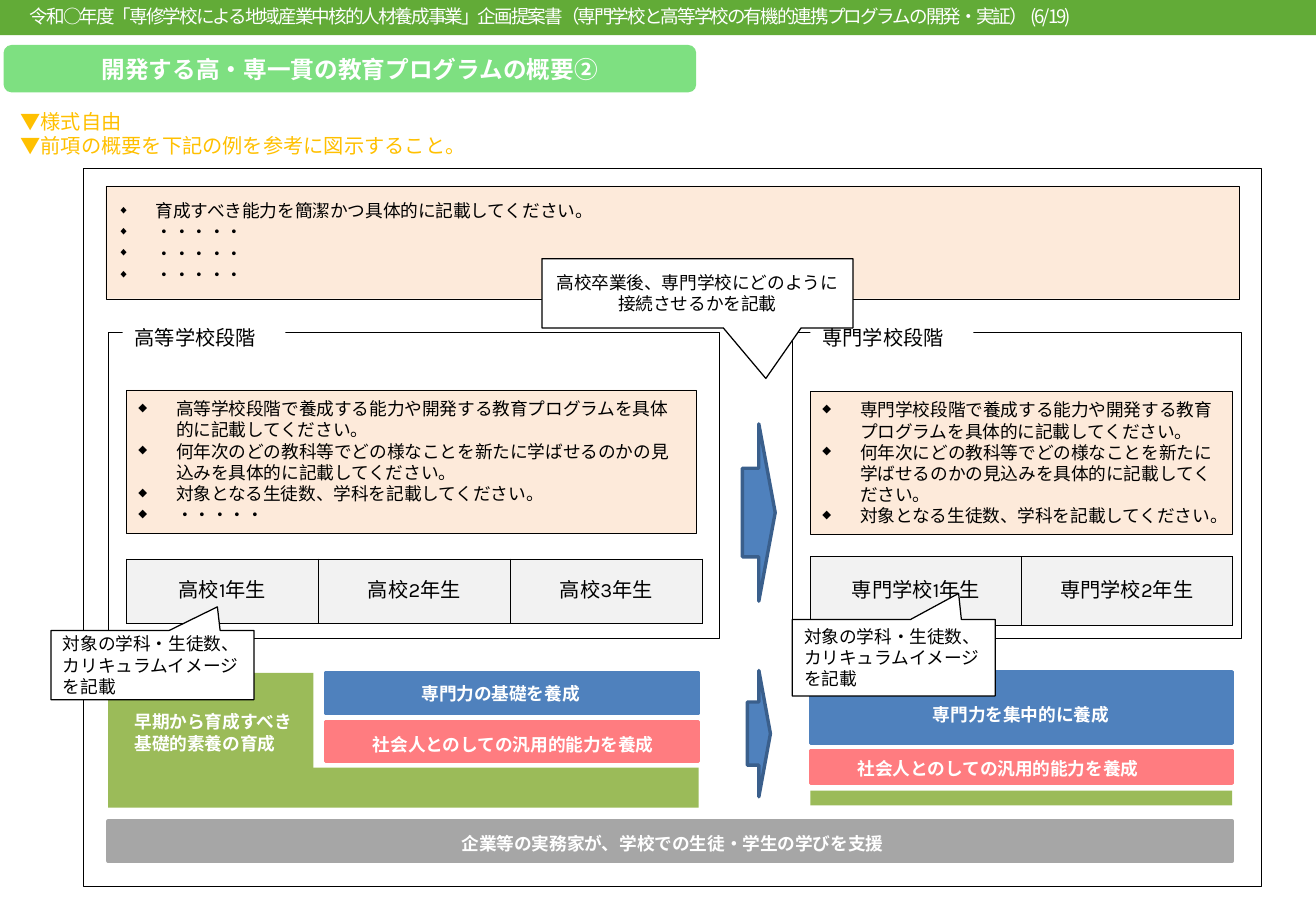
from lxml import etree
from pptx import Presentation
from pptx.dml.color import RGBColor
from pptx.enum.shapes import MSO_SHAPE
from pptx.enum.text import MSO_ANCHOR, MSO_AUTO_SIZE, PP_ALIGN
from pptx.oxml.ns import qn
from pptx.util import Inches, Pt

RECTANGLE, ROUNDED = MSO_SHAPE.RECTANGLE, MSO_SHAPE.ROUNDED_RECTANGLE
ARROW, CALLOUT = MSO_SHAPE.RIGHT_ARROW, MSO_SHAPE.RECTANGULAR_CALLOUT
TOP, MIDDLE = MSO_ANCHOR.TOP, MSO_ANCHOR.MIDDLE
LEFT, CENTER = PP_ALIGN.LEFT, PP_ALIGN.CENTER


class Theme:
    text_font, note_font = "Karla", "Noto Sans CJK JP"
    title, heading, header, body = 14, 12, 11, 10.5
    black, white, note = "000000", "FFFFFF", "FFC000"
    header_green, title_green, green = "62AB37", "7EE081", "9BBB59"
    blue, blue_edge, pink, gray = "4F81BD", "3A5F8C", "FF7C80", "A6A6A6"
    peach, cell = "FDEADA", "F2F2F2"


def add_box(kind, place, fill=None, line=None, width=0.25):
    """Add a preset shape; place is left, top, width, height in inches."""
    shape = slide.shapes.add_shape(kind, *map(Inches, place))
    shape.shadow.inherit = False
    for part, colour in ((shape.fill, fill), (shape.line.fill, line)):
        if colour:
            part.solid()
            part.fore_color.rgb = RGBColor.from_string(colour)
        else:
            part.background()
    if line:
        shape.line.width = Pt(width)
    return shape


def write(frame, lines, size=Theme.body, colour=Theme.black, bold=False, align=LEFT,
          anchor=MIDDLE, font=Theme.text_font, bullets=False):
    """Fill a text frame with one paragraph for each line."""
    settings = {"word_wrap": True, "auto_size": MSO_AUTO_SIZE.NONE, "vertical_anchor": anchor}
    for name, value in settings.items():
        setattr(frame, name, value)
    frame.text = "\n".join(lines)
    for paragraph in frame.paragraphs:
        paragraph.alignment = align
        paragraph.space_before = Pt(0)
        run = paragraph.runs[0]
        for name, value in {"name": font, "size": Pt(size), "bold": bold}.items():
            setattr(run.font, name, value)
        run.font.color.rgb = RGBColor.from_string(colour)
        etree.SubElement(run.font._element, qn("a:ea"), typeface=font)
        if bullets:
            properties = paragraph._p.get_or_add_pPr()
            properties.set("marL", str(Inches(0.31)))
            properties.set("indent", str(Inches(-0.31)))
            etree.SubElement(properties, qn("a:buSzPct"), val="65000")
            etree.SubElement(properties, qn("a:buChar"), char="◆")


presentation = Presentation()
presentation.slide_width, presentation.slide_height = Inches(10.83), Inches(7.5)
slide = presentation.slides.add_slide(presentation.slide_layouts[1])
title, abilities = slide.placeholders

# Columns shared by the two school stages
HIGH, COLLEGE = 0.89, 6.67
COLLEGE_WIDTH = 3.47
FULL_WIDTH = COLLEGE + COLLEGE_WIDTH - HIGH
SKILL, SKILL_WIDTH = 2.68, 3.07

# Title on its green bar
title_place = (0.03, 0.37, 5.7, 0.39)
add_box(ROUNDED, title_place, Theme.title_green)
slide.shapes._spTree.append(title._element)

# Title and ability list use the placeholders
for placeholder, place in ((title, title_place), (abilities, (0.87, 1.53, 9.33, 0.93))):
    for name, value in zip(("left", "top", "width", "height"), place):
        setattr(placeholder, name, Inches(value))
write(title.text_frame, ["開発する高・専一貫の教育プログラムの概要②"], Theme.title, Theme.white, True, CENTER)
write(abilities.text_frame, ["育成すべき能力を簡潔かつ具体的に記載してください。"] + ["・・・・・"] * 3, bullets=True)
abilities.fill.solid()
abilities.fill.fore_color.rgb = RGBColor.from_string(Theme.peach)
abilities.line.color.rgb = RGBColor.from_string(Theme.black)
abilities.line.width = Pt(0.25)

# Instructions
note = slide.shapes.add_textbox(*map(Inches, (0.07, 0.65, 10.32, 0.91))).text_frame
write(note, ["▼様式自由", "▼前項の概要を下記の例を参考に図示すること。"],
      Theme.heading, Theme.note, anchor=TOP, font=Theme.note_font)
note.margin_top = Inches(0.25)
for paragraph in note.paragraphs:
    paragraph.line_spacing = Pt(14.2)

# Outer frame
add_box(RECTANGLE, (0.69, 1.39, 9.69, 5.91), line=Theme.black, width=0.5)

# Stage panels: frame, heading, list
stages = [
    ((HIGH, 5.03), 1.01, "高等学校段階", (1.04, 3.21, 4.69, 1.18), [
        "高等学校段階で養成する能力や開発する教育プログラムを具体的に記載してください。",
        "何年次のどの教科等でどの様なことを新たに学ばせるのかの見込みを具体的に記載してください。",
        "対象となる生徒数、学科を記載してください。",
        "・・・・・"]),
    ((6.52, 3.7), COLLEGE, "専門学校段階", (COLLEGE, 3.22, COLLEGE_WIDTH, 1.18), [
        "専門学校段階で養成する能力や開発する教育プログラムを具体的に記載してください。",
        "何年次にどの教科等でどの様なことを新たに学ばせるのかの見込みを具体的に記載してください。",
        "対象となる生徒数、学科を記載してください。"]),
]
for (left, width), heading_left, heading, list_place, items in stages:
    add_box(RECTANGLE, (left, 2.74, width, 2.52), line=Theme.black, width=0.5)
    label = add_box(RECTANGLE, (heading_left, 2.63, 1.34, 0.3), Theme.white)
    write(label.text_frame, [heading], Theme.heading, anchor=TOP)
    panel = add_box(RECTANGLE, list_place, Theme.peach, Theme.black)
    write(panel.text_frame, items, bullets=True)

# School year tables
for place, school, years in (((1.04, 4.6, 4.74, 0.53), "高校", 3),
                             ((COLLEGE, 4.58, COLLEGE_WIDTH, 0.57), "専門学校", 2)):
    table = slide.shapes.add_table(1, years, *map(Inches, place)).table
    table.first_row = table.horz_banding = False
    for year, cell in enumerate(table.iter_cells(), 1):
        write(cell.text_frame, [f"{school}{year}年生"], Theme.heading, align=CENTER)
        cell.vertical_anchor = MIDDLE
        properties = cell._tc.get_or_add_tcPr()
        for side in ("lnL", "lnR", "lnT", "lnB"):
            border = etree.SubElement(properties, qn(f"a:{side}"), w=str(Pt(0.25)))
            fill = etree.SubElement(border, qn("a:solidFill"))
            etree.SubElement(fill, qn("a:srgbClr"), val=Theme.black)
        cell.fill.solid()
        cell.fill.fore_color.rgb = RGBColor.from_string(Theme.cell)

# Green base of early skills
for place in ((COLLEGE, 6.51, COLLEGE_WIDTH, 0.12), (HIGH, 5.54, 1.69, 1.1), (HIGH, 6.32, 4.86, 0.33)):
    add_box(RECTANGLE, place, Theme.green)

# Coloured bars
general = "社会人とのしての汎用的能力を養成"
for place, colour in (((SKILL, 5.54, SKILL_WIDTH, 0.33), Theme.blue),
                      ((SKILL, 5.94, SKILL_WIDTH, 0.33), Theme.pink),
                      ((COLLEGE, 6.18, COLLEGE_WIDTH, 0.27), Theme.pink),
                      ((COLLEGE, 5.53, COLLEGE_WIDTH, 0.59), Theme.blue),
                      ((HIGH, 6.76, FULL_WIDTH, 0.33), Theme.gray)):
    add_box(RECTANGLE, place, colour, colour, 2)

# Bar labels
for place, lines in (((1.01, 5.48, 1.84, 1.1), ["早期から育成すべき", "基礎的素養の育成"]),
                     ((3.37, 5.46, 1.84, 0.5), ["専門力の基礎を養成"]),
                     ((2.97, 5.88, 3.42, 0.5), [general]),
                     ((6.96, 6.08, 3.42, 0.5), [general]),
                     ((7.58, 5.63, 1.84, 0.5), ["専門力を集中的に養成"]),
                     ((3.7, 6.69, 4.37, 0.5), ["企業等の実務家が、学校での生徒・学生の学びを支援"])):
    label = slide.shapes.add_textbox(*map(Inches, place))
    write(label.text_frame, lines, colour=Theme.white, bold=True)

# Arrows from high school to college
for place in ((6.11, 3.49, 0.27, 1.46), (6.15, 5.52, 0.19, 1.04)):
    add_box(ARROW, place, Theme.blue, Theme.blue_edge, 2)

# Callouts
curriculum = "対象の学科・生徒数、カリキュラムイメージを記載"
connection = "高校卒業後、専門学校にどのように接続させるかを記載"
for place, tip, text, align in (((0.42, 5.19, 1.67, 0.57), (0.32, -0.84), curriculum, LEFT),
                                ((6.52, 5.1, 1.67, 0.63), (0.32, -0.84), curriculum, LEFT),
                                ((4.46, 2.13, 2.56, 0.57), (0.22, 1.23), connection, CENTER)):
    callout = add_box(CALLOUT, place, Theme.white, Theme.black, 0.75)
    callout.adjustments[0], callout.adjustments[1] = tip
    write(callout.text_frame, [text], align=align)

# Header band
add_box(RECTANGLE, (0, 0, 10.83, 0.29), Theme.header_green)
header = slide.shapes.add_textbox(*map(Inches, (-0.06, -0.01, 9.18, 0.29))).text_frame
write(header, ["令和○年度「専修学校による地域産業中核的人材養成事業」企画提案書"
               "（専門学校と高等学校の有機的連携プログラムの開発・実証） (6/19)"],
      Theme.header, Theme.white, align=CENTER, anchor=TOP, font=Theme.note_font)
header.paragraphs[0].runs[0].font._element.set("spc", "-120")

presentation.save("out.pptx")
